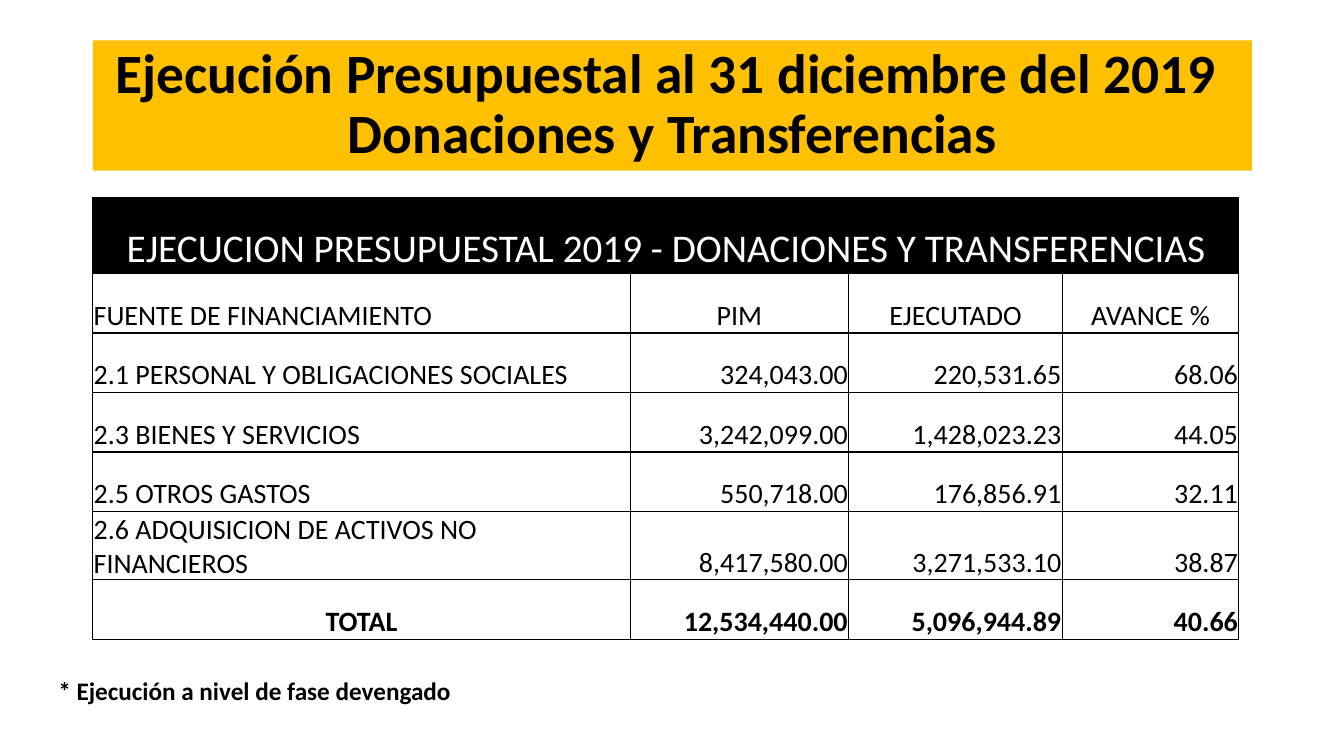
import lxml.etree
import pptx
import pptx.dml.color
import pptx.enum.text
import pptx.oxml.ns
import pptx.util

Cm = pptx.util.Cm
Align = pptx.enum.text.PP_ALIGN
Anchor = pptx.enum.text.MSO_ANCHOR

BLACK, WHITE, AMBER = "000000", "FFFFFF", "FFC000"
COLUMN_WIDTHS = [13.54, 5.51, 5.38, 4.45]
BANNER_HEIGHT, ROW_HEIGHT = 1.91, 1.5
BANNER = "EJECUCION PRESUPUESTAL 2019 - DONACIONES Y TRANSFERENCIAS"
ROWS = [
    ["FUENTE DE FINANCIAMIENTO", "PIM", "EJECUTADO", "AVANCE %"],
    ["2.1 PERSONAL Y OBLIGACIONES SOCIALES", "324,043.00", "220,531.65", "68.06"],
    ["2.3 BIENES Y SERVICIOS", "3,242,099.00", "1,428,023.23", "44.05"],
    ["2.5 OTROS GASTOS", "550,718.00", "176,856.91", "32.11"],
    ["2.6 ADQUISICION DE ACTIVOS NO FINANCIEROS", "8,417,580.00", "3,271,533.10", "38.87"],
    ["TOTAL", "12,534,440.00", "5,096,944.89", "40.66"],
]


def color(value):
    return pptx.dml.color.RGBColor.from_string(value)


def write(para, text, size, align, bold=False, ink=BLACK):
    para.text = text
    para.alignment = align
    for span in para.runs:
        span.font.name = "Calibri"
        span.font.size = pptx.util.Pt(size)
        span.font.bold = bold
        span.font.color.rgb = color(ink)


def add_borders(cell):
    properties = cell._tc.get_or_add_tcPr()
    for position, side in enumerate(["lnL", "lnR", "lnT", "lnB"]):
        line = lxml.etree.Element(pptx.oxml.ns.qn("a:" + side), w="12700")
        fill = lxml.etree.SubElement(line, pptx.oxml.ns.qn("a:solidFill"))
        lxml.etree.SubElement(fill, pptx.oxml.ns.qn("a:srgbClr"), val=BLACK)
        properties.insert(position, line)


def place_title(page, left, top, width, height):
    title = page.shapes.title
    title.left, title.top, title.width, title.height = map(Cm, (left, top, width, height))
    title.fill.solid()
    title.fill.fore_color.rgb = color(AMBER)
    frame = title.text_frame
    frame.word_wrap = True
    frame.auto_size = pptx.enum.text.MSO_AUTO_SIZE.NONE
    frame.vertical_anchor = Anchor.MIDDLE
    para = frame.paragraphs[0]
    write(para, "Ejecución Presupuestal al 31 diciembre del 2019 \vDonaciones y Transferencias",
          39.6, Align.CENTER, bold=True)
    para.line_spacing = 0.9


def place_budget_table(page, left, top):
    height = BANNER_HEIGHT + ROW_HEIGHT * len(ROWS)
    table = page.shapes.add_table(len(ROWS) + 1, len(COLUMN_WIDTHS), Cm(left), Cm(top),
                                  Cm(sum(COLUMN_WIDTHS)), Cm(height)).table
    table.first_row = table.horz_banding = False
    for column, width in zip(table.columns, COLUMN_WIDTHS):
        column.width = Cm(width)
    for index, row in enumerate(table.rows):
        row.height = Cm(ROW_HEIGHT if index else BANNER_HEIGHT)

    # Shared cell format
    for cell in table.iter_cells():
        cell.margin_left = cell.margin_right = cell.margin_top = Cm(0.02)
        cell.margin_bottom = 0
        cell.vertical_anchor = Anchor.BOTTOM
        cell.fill.background()
        add_borders(cell)

    # Black banner across all columns
    banner = table.cell(0, 0)
    banner.merge(table.cell(0, len(COLUMN_WIDTHS) - 1))
    banner.fill.solid()
    banner.fill.fore_color.rgb = color(BLACK)
    write(banner.text_frame.paragraphs[0], BANNER, 28, Align.CENTER, ink=WHITE)

    # Headings, amounts and total
    for row, texts in enumerate(ROWS, start=1):
        is_total = row == len(ROWS)
        for column, text in enumerate(texts):
            if column == 0:
                align = Align.CENTER if is_total else Align.LEFT
            else:
                align = Align.CENTER if row == 1 else Align.RIGHT
            write(table.cell(row, column).text_frame.paragraphs[0], text, 20, align, is_total)


def place_footnote(page, left, top, width, height):
    box = page.shapes.add_textbox(Cm(left), Cm(top), Cm(width), Cm(height))
    box.text_frame.word_wrap = False
    box.text_frame.auto_size = pptx.enum.text.MSO_AUTO_SIZE.SHAPE_TO_FIT_TEXT
    write(box.text_frame.paragraphs[0], "* Ejecución a nivel de fase devengado",
          18, Align.LEFT, bold=True)


def main():
    deck = pptx.Presentation()
    deck.slide_width, deck.slide_height = Cm(33.87), Cm(19.05)
    page = deck.slides.add_slide(deck.slide_layouts.get_by_name("Title Only"))
    place_title(page, 2.34, 1.02, 29.21, 3.28)
    place_footnote(page, 1.22, 16.89, 10.64, 1.02)
    place_budget_table(page, 2.34, 4.98)
    deck.save("out.pptx")


if __name__ == "__main__":
    main()
